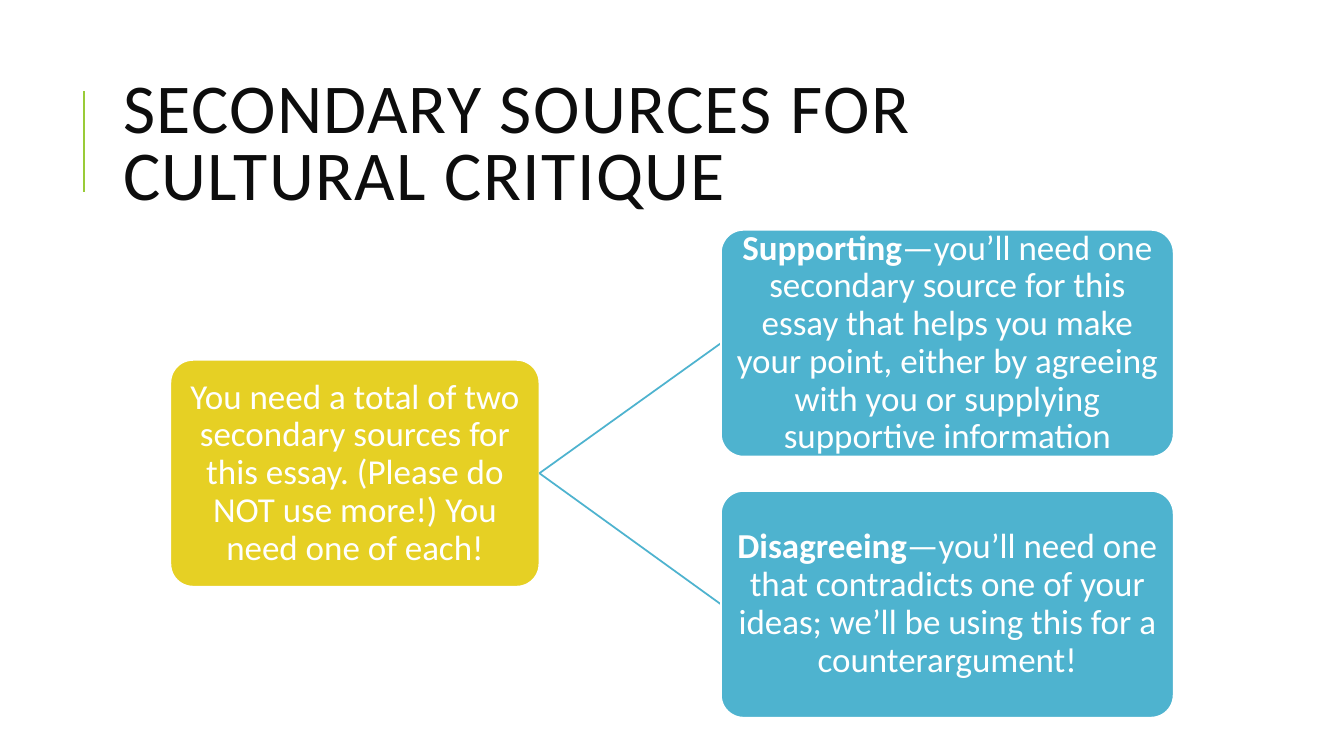
"""Build a slide that splits two secondary sources into supporting and disagreeing."""
from dataclasses import dataclass

from lxml.etree import SubElement
from pptx import Presentation
from pptx.dml.color import RGBColor
from pptx.enum.shapes import MSO_CONNECTOR, MSO_SHAPE
from pptx.enum.text import MSO_ANCHOR, MSO_AUTO_SIZE, PP_ALIGN
from pptx.oxml.ns import qn
from pptx.slide import Slide
from pptx.util import Inches, Pt

WHITE = RGBColor(0xFF, 0xFF, 0xFF)
INK = RGBColor(0x0D, 0x0D, 0x0D)
GREEN = RGBColor(0x99, 0xCB, 0x38)
YELLOW = RGBColor(0xE6, 0xD0, 0x24)
BLUE = RGBColor(0x4E, 0xB3, 0xCF)
FONT = "Calibri"
BOX_HEIGHT = 2.25


@dataclass(frozen=True)
class Card:
    left: float
    top: float
    width: float
    fill: RGBColor
    lead: str
    body: str

    @property
    def right(self) -> float:
        return self.left + self.width

    @property
    def middle(self) -> float:
        return self.top + BOX_HEIGHT / 2


ROOT = Card(1.69, 3.57, 3.66, YELLOW, "",
            "You need a total of two secondary sources for this essay. "
            "(Please do NOT use more!) You need one of each!")
BRANCHES = [
    Card(7.15, 2.28, 4.49, BLUE, "Supporting",
         "—you’ll need one secondary source for this essay that helps you make "
         "your point, either by agreeing with you or supplying supportive information"),
    Card(7.15, 4.87, 4.49, BLUE, "Disagreeing",
         "—you’ll need one that contradicts one of your ideas; "
         "we’ll be using this for a counterargument!"),
]


def add_line(page: Slide, start: tuple[float, float], end: tuple[float, float],
             color: RGBColor, weight: float) -> None:
    line = page.shapes.add_connector(
        MSO_CONNECTOR.STRAIGHT, *map(Inches, start), *map(Inches, end))
    line.line.color.rgb = color
    line.line.width = Pt(weight)
    SubElement(line._element.spPr, qn("a:effectLst"))


def add_card(page: Slide, card: Card) -> None:
    box = page.shapes.add_shape(
        MSO_SHAPE.ROUNDED_RECTANGLE, Inches(card.left), Inches(card.top),
        Inches(card.width), Inches(BOX_HEIGHT))
    box.adjustments[0] = 0.1
    box.shadow.inherit = False
    box.fill.solid()
    box.fill.fore_color.rgb = card.fill
    box.line.color.rgb = WHITE
    box.line.width = Pt(1.25)
    frame = box.text_frame
    frame.word_wrap = True
    frame.vertical_anchor = MSO_ANCHOR.MIDDLE
    frame.margin_left = frame.margin_right = Inches(0.02)
    frame.margin_top = frame.margin_bottom = Inches(0.02)
    para = frame.paragraphs[0]
    para.alignment = PP_ALIGN.CENTER
    para.line_spacing = 0.9
    for text, bold in ((card.lead, True), (card.body, False)):
        if text:
            span = para.add_run()
            span.text = text
            span.font.name = FONT
            span.font.size = Pt(25)
            span.font.bold = bold
            span.font.color.rgb = WHITE


def set_title(page: Slide, text: str) -> None:
    title = page.shapes.title
    title.left, title.top = Inches(1.12), Inches(0.64)
    title.width, title.height = Inches(10.63), Inches(1.64)
    frame = title.text_frame
    frame.word_wrap = True
    frame.auto_size = MSO_AUTO_SIZE.NONE
    frame.vertical_anchor = MSO_ANCHOR.MIDDLE
    para = frame.paragraphs[0]
    para.alignment = PP_ALIGN.LEFT
    para.line_spacing = 0.8
    span = para.add_run()
    span.text = text
    span.font.name = FONT
    span.font.size = Pt(50)
    span.font.color.rgb = INK
    span._r.get_or_add_rPr().set("spc", "100")


def main() -> None:
    deck = Presentation()
    deck.slide_width, deck.slide_height = Inches(13.33), Inches(7.5)
    page = deck.slides.add_slide(deck.slide_layouts.get_by_name("Title Only"))
    add_line(page, (0.83, 1.9), (0.83, 0.9), GREEN, 1.5)
    set_title(page, "SECONDARY SOURCES FOR CULTURAL CRITIQUE")
    add_card(page, ROOT)
    for branch in BRANCHES:
        add_line(page, (ROOT.right, ROOT.middle), (branch.left, branch.middle), BLUE, 1.25)
        add_card(page, branch)
    deck.save("out.pptx")


if __name__ == "__main__":
    main()
